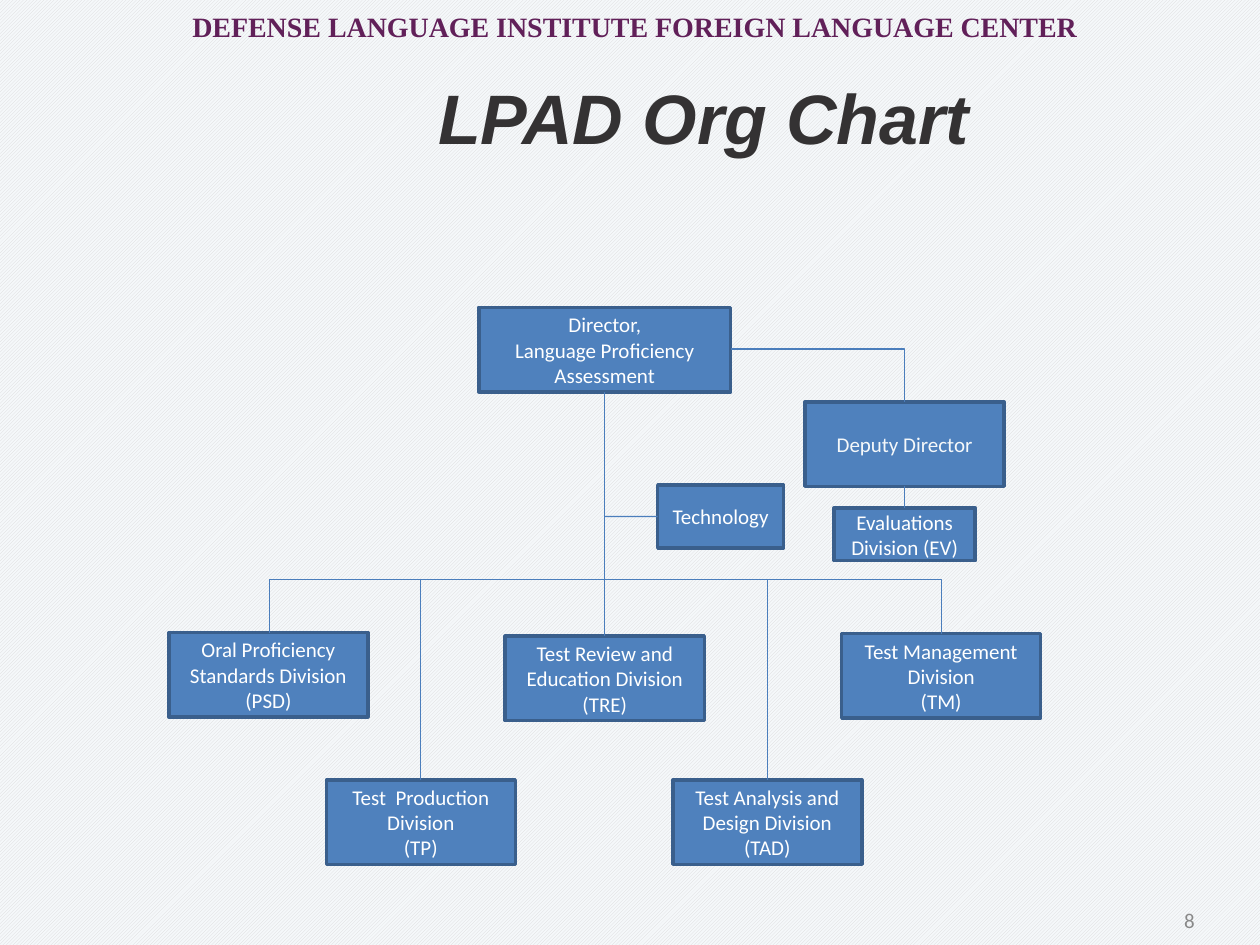
from pptx import Presentation
from pptx.dml.color import RGBColor
from pptx.enum import dml, shapes, text
from pptx.oxml.ns import qn
from pptx.util import Inches, Pt
from lxml import etree

BLUE = RGBColor(0x4F, 0x81, 0xBD)
EDGE = RGBColor(0x3A, 0x5F, 0x8C)
WIRE = RGBColor(0x4B, 0x7E, 0xBC)
WHITE = RGBColor(0xFF, 0xFF, 0xFF)
PALE = RGBColor(0xF5, 0xF8, 0xFA)
HATCH = RGBColor(0xD9, 0xD9, 0xD9)
PLUM = RGBColor(0x61, 0x20, 0x59)
DARK = RGBColor(0x34, 0x32, 0x33)
GRAY = RGBColor(0x89, 0x89, 0x89)

MID, ALIGN = text.MSO_ANCHOR.MIDDLE, text.PP_ALIGN
TOP, LEFT, BASE = 0, 1, 2
TRUNK, BAR = 4.8, 4.6  # x of the main stem, y of the division bar

# key: (paragraphs, left, top, width, height)
BOXES = {
    "TP": (["Test  Production Division", "(TP)"], 3.34 - 0.75, 6.19, 1.5, 0.67),
    "TAD": (["Test Analysis and Design Division", "(TAD)"], 5.34, 6.19, 1.5, 0.67),
    "TM": (["Test Management Division", "(TM)"], 6.68, 5.03, 1.58, 0.67),
    "PSD": (["Oral Proficiency Standards Division (PSD)"], 1.34, 5.02, 1.58, 0.67),
    "TRE": (["Test Review and Education Division", "(TRE)"], 4.01, 5.05, 1.58, 0.67),
    "Deputy": (["Deputy Director"], 6.39, 3.19, 1.58, 0.67),
    "Director": (["Director,", "Language Proficiency Assessment"], 3.8, 2.44, 2, 0.67),
    "EV": (["Evaluations Division (EV)"], 6.62, 4.03, 1.12, 0.42),
    "Tech": (["Technology"], 5.22, 3.85, 1, 0.5),
}

# (start point, end point, start joint, end joint); a joint is (box, side)
LINES = [
    ((TRUNK, 3.11), (TRUNK, BAR), ("Director", BASE), None),
    ((6.09, 6.19), (6.09, BAR), ("TAD", TOP), None),
    ((3.34, 6.19), (3.34, BAR), ("TP", TOP), None),
    ((2.31, BAR), (6.22, BAR), None, None),
    ((5.22, 4.1), (TRUNK, 4.1), ("Tech", LEFT), None),
    ((7.18, 3.86), (7.18, 4.03), ("Deputy", BASE), ("EV", TOP)),
    ((TRUNK, BAR), (TRUNK, 5.05), None, ("TRE", TOP)),
]

# each runs level first, then down
ELBOWS = [
    ((4.68, BAR), (2.14, 5.02)),
    ((6.09, BAR), (7.47, 5.03)),
    ((5.8, 2.77), (7.18, 3.19)),
]


def write(shape, paras, size, name, color, align=ALIGN.CENTER, **more):
    frame = shape.text_frame
    frame.word_wrap = True
    frame.vertical_anchor = MID
    frame.text = "\n".join(paras)
    look = dict(size=Pt(size), name=name, **more)
    for para in frame.paragraphs:
        para.alignment = align
        for run in para.runs:
            for key, val in look.items():
                setattr(run.font, key, val)
            run.font.color.rgb = color


def place(shape, *area):
    for key, val in zip(("left", "top", "width", "height"), area):
        setattr(shape, key, Inches(val))


def wire(slide, start, end, kind=shapes.MSO_CONNECTOR.STRAIGHT):
    points = [Inches(v) for v in (*start, *end)]
    line = slide.shapes.add_connector(kind, *points)
    line.line.color.rgb = WIRE
    line.line.width = Pt(0.75)
    etree.SubElement(line._element.spPr, qn("a:effectLst"))
    return line


def elbow(slide, start, end):
    """Draw a connector with a single right-angle turn."""
    line = wire(slide, start, end, shapes.MSO_CONNECTOR.ELBOW)
    line._element.spPr.find(qn("a:prstGeom")).set("prst", "bentConnector2")


def main():
    deck = Presentation()
    deck.slide_width, deck.slide_height = Inches(10), Inches(7.5)
    slide = deck.slides.add_slide(deck.slide_layouts[5])

    back = slide.background.fill
    back.patterned()
    back.pattern = dml.MSO_PATTERN.LIGHT_UPWARD_DIAGONAL
    back.fore_color.rgb, back.back_color.rgb = HATCH, PALE

    area = [Inches(v) for v in (0, -0.08, 10.08, 0.58)]
    head = slide.shapes.add_textbox(*area)
    write(head, ["DEFENSE LANGUAGE INSTITUTE FOREIGN LANGUAGE CENTER"],
          16, "Times New Roman", PLUM, bold=True)

    title = slide.shapes.title
    place(title, 1.5, 0.3, 8.17, 1.25)
    write(title, ["LPAD Org Chart"], 40, "Arial", DARK, bold=True, italic=True)

    boxes = {}
    for key, (paras, *area) in BOXES.items():
        spot = [Inches(v) for v in area]
        box = slide.shapes.add_shape(shapes.MSO_SHAPE.RECTANGLE, *spot)
        box.shadow.inherit = False
        box.fill.solid()
        box.fill.fore_color.rgb = BLUE
        box.line.color.rgb = EDGE
        box.line.width = Pt(2)
        write(box, paras, 12, "Calibri", PALE if key == "Deputy" else WHITE)
        boxes[key] = box

    for start, end, first, last in LINES:
        line = wire(slide, start, end)
        for joint, join in ((first, line.begin_connect), (last, line.end_connect)):
            if joint:
                join(boxes[joint[0]], joint[1])
    for start, end in ELBOWS:
        elbow(slide, start, end)

    area = [Inches(v) for v in (7.25, 7.1, 2.33, 0.4)]
    page = slide.shapes.add_textbox(*area)
    write(page, ["8"], 12, "Calibri", GRAY, ALIGN.RIGHT)

    deck.save("out.pptx")


if __name__ == "__main__":
    main()
